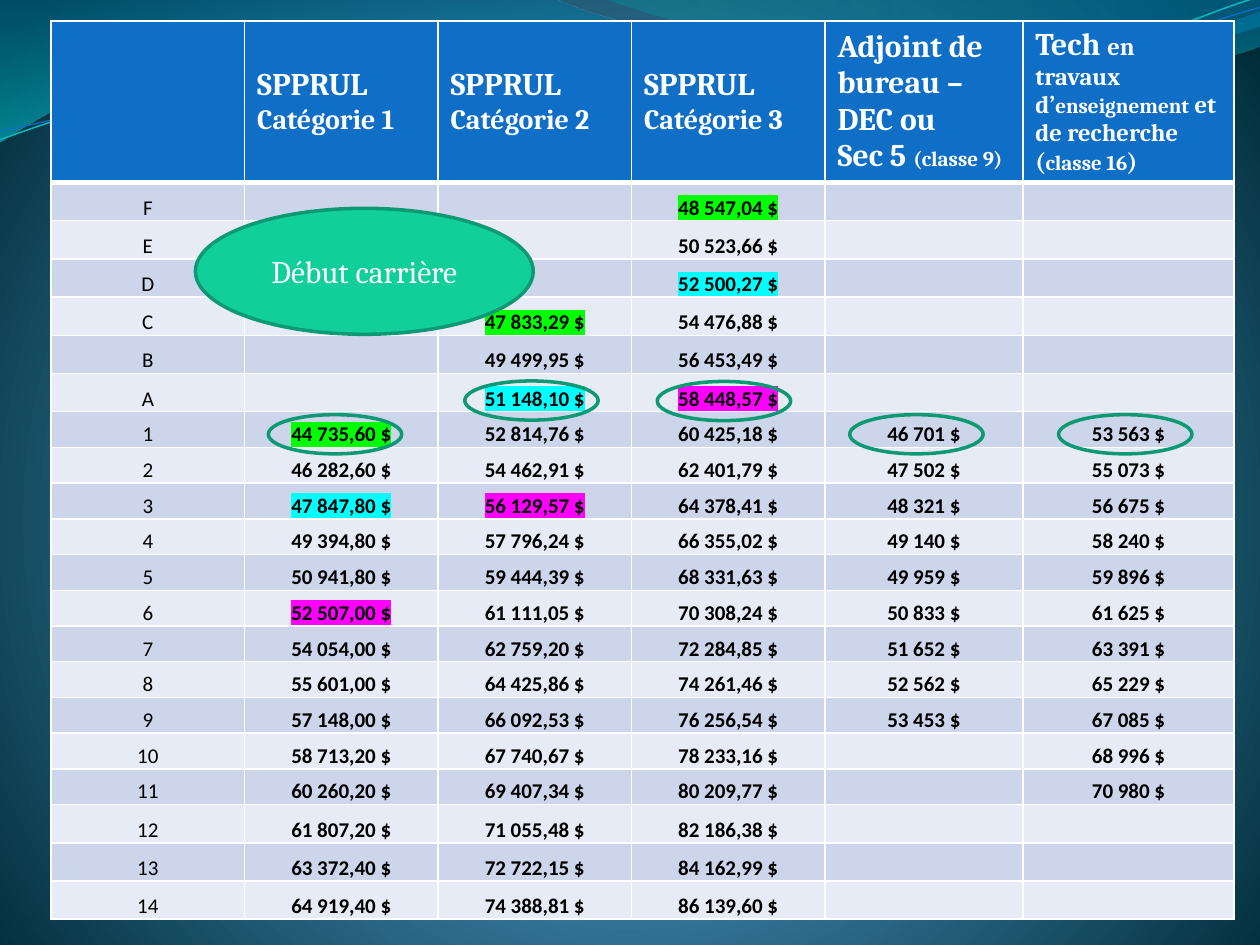
from dataclasses import dataclass

from lxml import etree
from pptx import Presentation
from pptx.dml.color import RGBColor
from pptx.enum.shapes import MSO_SHAPE
from pptx.enum.text import MSO_ANCHOR, PP_ALIGN
from pptx.oxml import parse_xml
from pptx.oxml.ns import nsdecls, qn
from pptx.util import Cm, Pt

OVAL = MSO_SHAPE.OVAL
CENTER = PP_ALIGN.CENTER
MIDDLE, BOTTOM = MSO_ANCHOR.MIDDLE, MSO_ANCHOR.BOTTOM


@dataclass(frozen=True)
class Theme:
    head: str = "0F6FC6"
    odd: str = "CCD5EA"
    even: str = "E7EBF5"
    white: str = "FFFFFF"
    black: str = "000000"
    mint: str = "10CF9B"
    ring: str = "0C9973"
    aqua: str = "0AB8BF"
    marks: tuple = ((0, "00FF00"), (2, "00FFFF"), (5, "FF00FF"))
    glow: tuple = ((0, "4AA0D6"), (25, "4C98C7"), (100, "002C38"))
    serif: str = "Cambria"
    sans: str = "Calibri"
    big: int = 18
    mid: int = 16
    note: int = 14
    small: int = 12


T = Theme()

HEADS = [
    [],
    *([[("SPPRUL", T.big)], [(f"Catégorie {n}", T.mid)]] for n in (1, 2, 3)),
    [[("Adjoint de bureau – DEC ou", T.big)],
     [("Sec 5 ", T.big), ("(classe 9)", T.small)]],
    [[("Tech ", T.big), ("en travaux d’", T.note), ("enseignement", T.small),
      (" et de recherche (", T.note), ("classe 16", T.small), (")", T.note)]],
]

STEPS = [*"FEDCBA", *(str(n) for n in range(1, 15))]

PAY = [
    (7, "44 735,60;46 282,60;47 847,80;49 394,80;50 941,80;52 507,00;54 054,00;"
        "55 601,00;57 148,00;58 713,20;60 260,20;61 807,20;63 372,40;64 919,40"),
    (4, "47 833,29;49 499,95;51 148,10;52 814,76;54 462,91;56 129,57;57 796,24;"
        "59 444,39;61 111,05;62 759,20;64 425,86;66 092,53;67 740,67;69 407,34;"
        "71 055,48;72 722,15;74 388,81"),
    (1, "48 547,04;50 523,66;52 500,27;54 476,88;56 453,49;58 448,57;60 425,18;"
        "62 401,79;64 378,41;66 355,02;68 331,63;70 308,24;72 284,85;74 261,46;"
        "76 256,54;78 233,16;80 209,77;82 186,38;84 162,99;86 139,60"),
    (7, "46 701;47 502;48 321;49 140;49 959;50 833;51 652;52 562;53 453"),
    (7, "53 563;55 073;56 675;58 240;59 896;61 625;63 391;65 229;67 085;"
        "68 996;70 980"),
]

WIDTHS = [3.9, 3.9, 3.9, 3.9, 3.99, 4.26]
TALL, SHORT, TOP = 0.77, 0.72, 3.25
RINGS = [(21.34, 8.36), (13.25, 7.69), (9.37, 7.68), (5.41, 8.36), (17.13, 8.36)]

UNIT = Cm(0.0254)
WAVES = [
    ([(0, 0), (440, -1), [(476, 17), (664, 63), (758, 63)],
      [(853, 63), (958, 26), (1000, 9)], (1001, 36),
      [(983, 44), (870, 76), (746, 75)], [(622, 75), (382, 28), (257, 34)],
      [(129, 36), (46, 83), (-1, 113)]],
     ((0, "0074A1", 45), (1, "00C6CF", 55)), 270),
    ([(479, -1), [(509, 11), (682, 62), (769, 65)],
      [(856, 69), (961, 32), (1000, 21)], (1000, 0)],
     ((0, "00A1A9", 30), (0.8, "008BBF", 45)), 0),
]
CURVES = [
    ([(0, 111), [(48, 93), (158, 57), (277, 52)], [(395, 47), (593, 89), (713, 80)],
      [(833, 71), (938, 15), (998, -2)]], T.aqua, 0.85),
    ([(0, 104), [(47, 96), (164, 61), (283, 56)], [(403, 51), (597, 84), (717, 75)],
      [(836, 67), (941, 21), (1000, 6)]], T.head, 0.75),
]


def rgb(code):
    return RGBColor.from_string(code)


def style(run, size, font, color, bold=False):
    run.font.size = Pt(size)
    run.font.name = font
    run.font.bold = bold
    run.font.color.rgb = rgb(color)


def add_path(slide, steps, close):
    pen = slide.shapes.build_freeform(*steps[0], scale=UNIT)
    for step in steps[1:]:
        pen.add_line_segments(step if isinstance(step, list) else [step], close=False)
    if close:
        pen.add_line_segments([], close=True)
    shape = pen.convert_to_shape()
    shape.shadow.inherit = False
    lines = iter(list(shape._element.spPr.iter(qn("a:lnTo"))))
    for step in steps[1:]:
        line = next(lines)
        if isinstance(step, list):
            line.tag = qn("a:cubicBezTo")
            for _ in step[1:]:
                extra = next(lines)
                line.append(extra[0])
                extra.getparent().remove(extra)
    return shape


def add_wave(slide, steps, stops, angle):
    shape = add_path(slide, steps, True)
    shape.line.fill.background()
    shape.fill.gradient()
    shape.fill.gradient_angle = angle
    for stop, (place, color, alpha) in zip(shape.fill.gradient_stops, stops):
        stop.position = place
        stop.color.rgb = rgb(color)
    tags = shape._element.spPr.iter(qn("a:srgbClr"))
    for tag, (place, color, alpha) in zip(tags, stops):
        etree.SubElement(tag, qn("a:alpha"), val=str(alpha * 1000))


def add_curve(slide, steps, color, width):
    shape = add_path(slide, steps, False)
    shape.fill.background()
    shape.line.color.rgb = rgb(color)
    shape.line.width = Pt(width)


def set_back(slide):
    stops = "".join(f'<a:gs pos="{place * 1000}"><a:srgbClr val="{color}"/></a:gs>'
                    for place, color in T.glow)
    slide._element.cSld.insert(0, parse_xml(
        f'<p:bg {nsdecls("p", "a")}><p:bgPr><a:gradFill rotWithShape="1">'
        f'<a:gsLst>{stops}</a:gsLst><a:path path="circle"><a:fillToRect '
        'l="10000" t="110000" r="10000" b="100000"/></a:path></a:gradFill>'
        '<a:effectLst/></p:bgPr></p:bg>'))


def set_cell(cell, color, base=1):
    cell.fill.solid()
    cell.fill.fore_color.rgb = rgb(color)
    props = cell._tc.get_or_add_tcPr()
    for i, (side, width) in enumerate(zip("LRTB", (1, 1, 1, base))):
        props.insert(i, parse_xml(
            f'<a:ln{side} {nsdecls("a")} w="{Pt(width)}"><a:solidFill>'
            f'<a:srgbClr val="{T.white}"/></a:solidFill></a:ln{side}>'))


def fill_head(cell, lines):
    set_cell(cell, T.head, 3)
    cell.vertical_anchor = MIDDLE
    frame = cell.text_frame
    for i, line in enumerate(lines):
        para = frame.add_paragraph() if i else frame.paragraphs[0]
        for text, size in line:
            run = para.add_run()
            run.text = text
            style(run, size, T.serif, T.white, True)


def fill_body(cell, row, text, bold, mark):
    set_cell(cell, T.odd if row % 2 else T.even)
    cell.vertical_anchor = BOTTOM
    cell.margin_left = cell.margin_right = cell.margin_top = cell.margin_bottom = 0
    para = cell.text_frame.paragraphs[0]
    para.alignment = CENTER
    if not text:
        etree.SubElement(para._p, qn("a:endParaRPr"), sz=str(T.small * 100))
        return
    para.text = text
    run = para.runs[0]
    style(run, T.small, T.sans, T.black, bold)
    if mark:
        run._r.rPr.find(qn("a:solidFill")).addnext(parse_xml(
            f'<a:highlight {nsdecls("a")}><a:srgbClr val="{mark}"/></a:highlight>'))


def add_grid(slide):
    high = [TOP] + [SHORT if 7 <= n <= 17 else TALL for n in range(1, 21)]
    grid = slide.shapes.add_table(len(high), len(WIDTHS), Cm(1.03), Cm(0.42),
                                  Cm(sum(WIDTHS)), Cm(sum(high))).table
    for col, width in zip(grid.columns, WIDTHS):
        col.width = Cm(width)
    for row, height in zip(grid.rows, high):
        row.height = Cm(height)
    for c, lines in enumerate(HEADS):
        fill_head(grid.cell(0, c), lines)
    for r, step in enumerate(STEPS, 1):
        fill_body(grid.cell(r, 0), r, step, False, None)
    for c, (start, text) in enumerate(PAY, 1):
        sums = text.split(";")
        marks = dict(T.marks) if c <= 3 else {}
        for r in range(1, len(STEPS) + 1):
            n = r - start
            pay = f"{sums[n]} $" if 0 <= n < len(sums) else ""
            fill_body(grid.cell(r, c), r, pay, True, marks.get(n))


def add_oval(slide, x, y, width, height):
    shape = slide.shapes.add_shape(OVAL, Cm(x), Cm(y), Cm(width), Cm(height))
    shape.shadow.inherit = False
    shape.fill.background()
    shape.line.color.rgb = rgb(T.ring)
    shape.line.width = Pt(2)
    return shape


def add_badge(slide, text):
    shape = add_oval(slide, 3.94, 4.2, 6.81, 2.54)
    shape.fill.solid()
    shape.fill.fore_color.rgb = rgb(T.mint)
    frame = shape.text_frame
    frame.text = text
    frame.vertical_anchor = MIDDLE
    frame.paragraphs[0].alignment = CENTER
    style(frame.paragraphs[0].runs[0], T.big, T.serif, T.white)


def main():
    deck = Presentation()
    deck.slide_width, deck.slide_height = Cm(25.4), Cm(19.05)
    slide = deck.slides.add_slide(deck.slide_layouts[6])
    set_back(slide)
    for wave in WAVES:
        add_wave(slide, *wave)
    for curve in CURVES:
        add_curve(slide, *curve)
    add_grid(slide)
    add_badge(slide, "Début carrière")
    for x, y in RINGS:
        add_oval(slide, x, y, 2.69, 0.79)
    deck.save("out.pptx")


if __name__ == "__main__":
    main()
